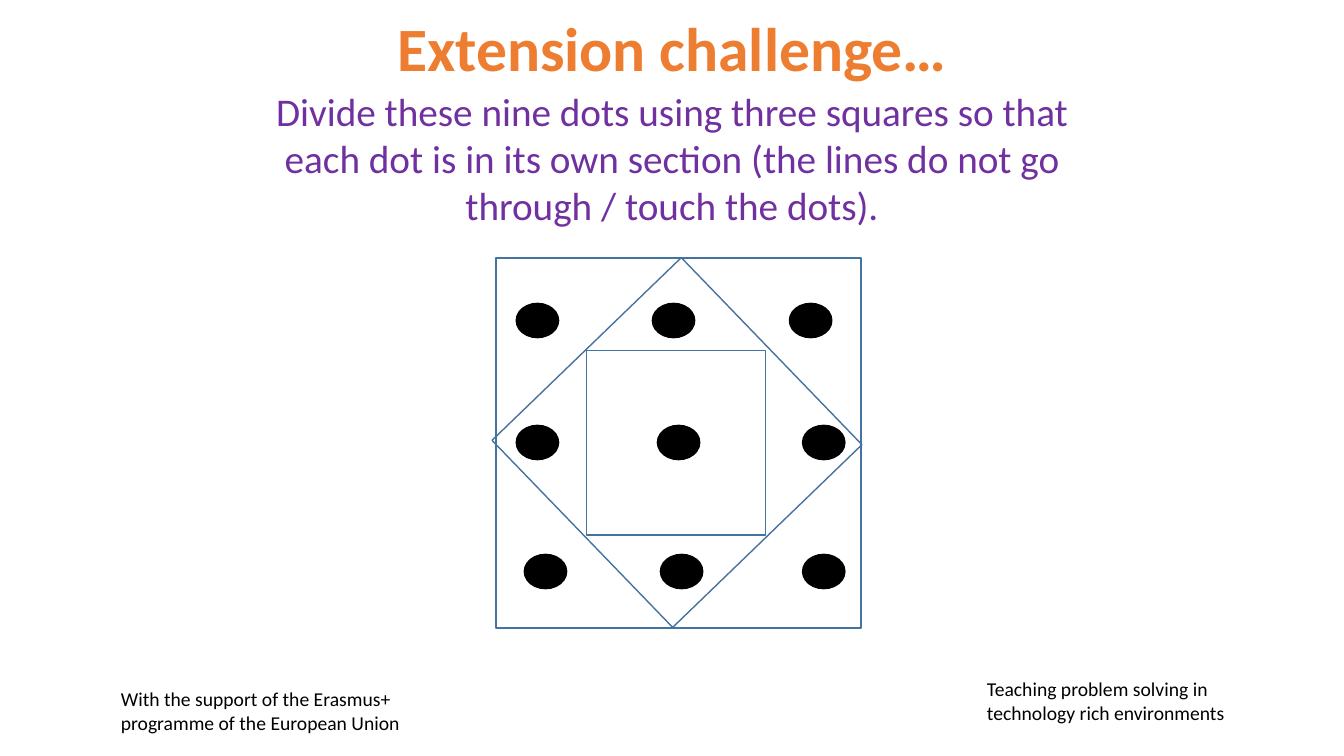
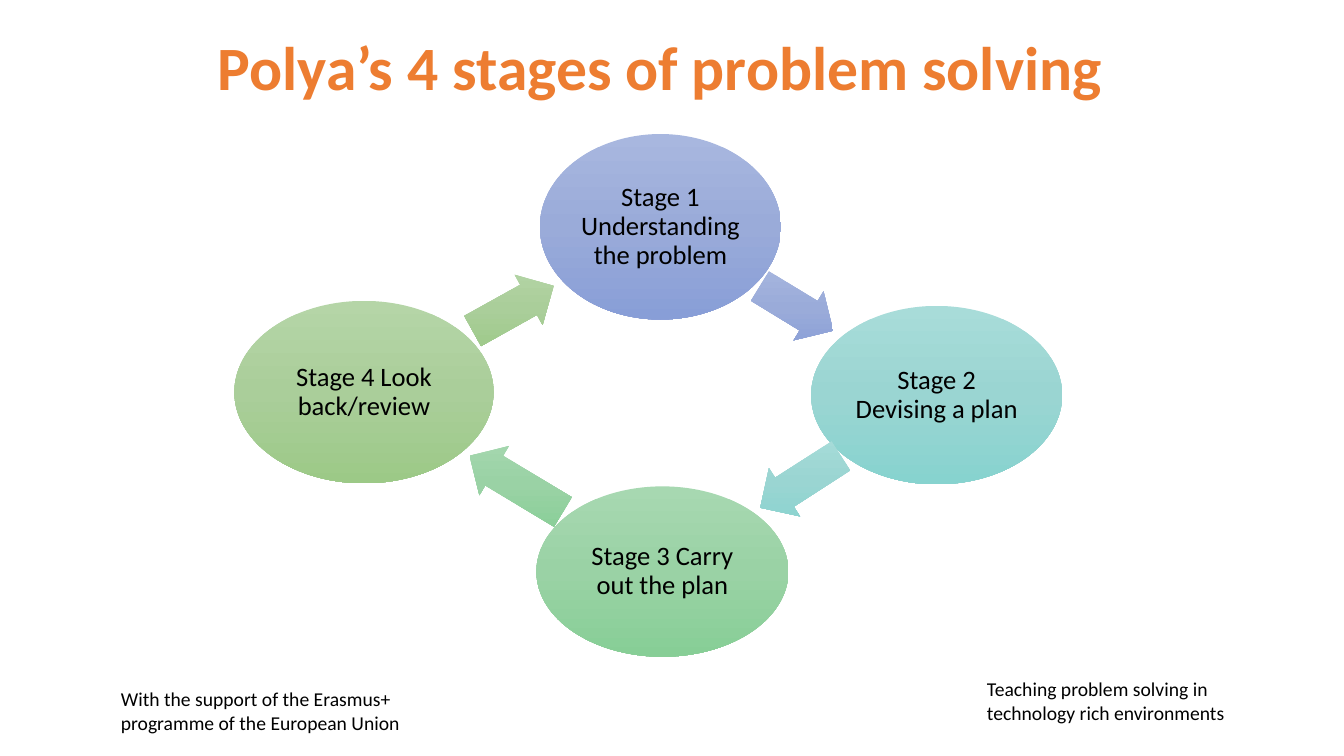
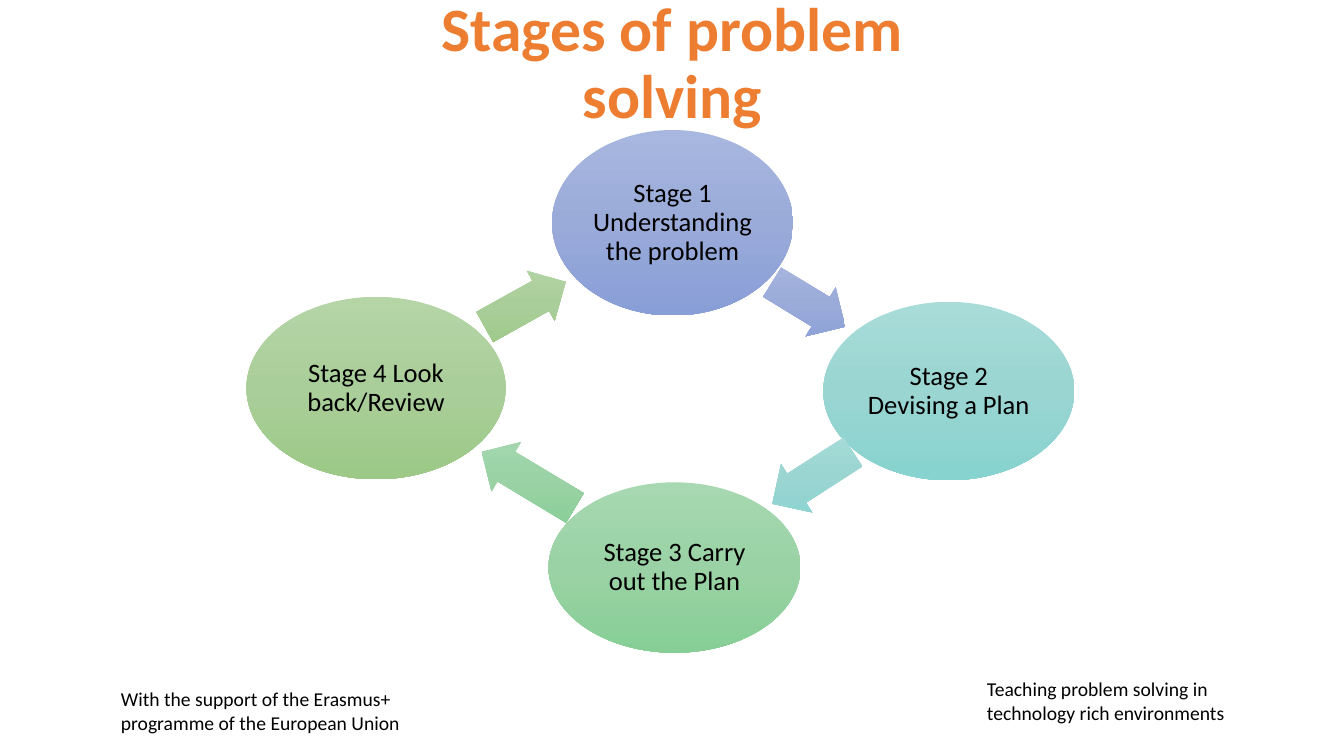
import math
from dataclasses import dataclass

from pptx import Presentation
from pptx import util as u
from pptx.dml.color import RGBColor
from pptx.enum import shapes, text
from pptx.oxml import parse_xml
from pptx.oxml.ns import nsdecls, qn


@dataclass(frozen=True)
class Theme:
    font: str = "Calibri"
    title: str = "ED7D31"
    body: str = "7030A0"
    ink: str = "000000"
    outline: str = "43739E"
    title_size: int = 44
    body_size: int = 28
    stage_size: int = 19
    footer_size: int = 14


THEME = Theme()
SLIDE_SIZE = (13.33, 7.5)

FOOTERS = [
    ("Teaching problem solving in technology rich environments", (9.69, 6.67, 2.58, 0.57)),
    ("With the support of the Erasmus+ programme of the European Union", (1.1, 6.77, 3.38, 0.58)),
]

CHALLENGE = {
    "title": ("Extension challenge…", (3.07, 0.09, 7.2, 0.85)),
    "body": ("Divide these nine dots using three squares so that each dot is in its own "
             "section (the lines do not go through / touch the dots).", (2.5, 0.82, 8.33, 1.51)),
    # row top: left edges of its dots
    "dots": {3.01: (5.12, 6.47, 7.83), 4.22: (5.12, 6.52, 7.96), 5.5: (5.2, 6.55, 7.96)},
    # box and rotation
    "squares": [((4.92, 2.56, 3.62, 3.67), 0),
                ((5.41, 3.1, 2.61, 2.58), 316),
                ((5.82, 3.48, 1.77, 1.83), 0)],
}
DOT_SIZE = (0.42, 0.34)

CYCLES = [
    {"title": ("Polya’s 4 stages of problem solving", (0.8, 0.2, 11.5, 1)),
     "centre": (6.55, 3.92),
     "stages": ["Stage 1 Understanding the problem", "Stage 2 Devising a plan",
                "Stage 3 Carry out the plan", "Stage 4 Look back/review"]},
    {"title": ("Stages of problem solving", (3.46, 0.01, 6.42, 1.27)),
     "centre": (6.67, 3.88),
     "stages": ["Stage 1 Understanding the problem", "Stage 2 Devising a Plan",
                "Stage 3 Carry out the Plan", "Stage 4 Look back/Review"]},
]

# Offsets are measured from the centre of the cycle.
STAGE_STYLES = [
    {"offset": (0, -1.67), "size": (2.39, 1.84), "arrow_offset": (1.35, -0.86),
     "arrow_length": 0.85, "gradient": ("A8B7DF", "9AABD9", "889ED7")},
    {"offset": (2.74, 0), "size": (2.49, 1.77), "arrow_offset": (1.39, 0.86),
     "arrow_length": 0.95, "gradient": ("A8DCD9", "9AD5D2", "87D3CF")},
    {"offset": (0.02, 1.75), "size": (2.5, 1.69), "arrow_offset": (-1.43, 0.88),
     "arrow_length": 1.08, "gradient": ("A7D8B1", "9AD2A5", "87CE96")},
    {"offset": (-2.94, -0.03), "size": (2.57, 1.81), "arrow_offset": (-1.46, -0.86),
     "arrow_length": 0.92, "gradient": ("B5D5A7", "AACE9A", "9CC987")},
]
ARROW_HEIGHT = 0.57
STAGE_INSET = 0.04


def inches(box):
    return [u.Inches(length) for length in box]


def centred_box(centre, offset, size):
    return [c + o - s / 2 for c, o, s in zip(centre, offset, size)] + list(size)


def write(shape, content, size, color, align=text.PP_ALIGN.LEFT,
          anchor=text.MSO_ANCHOR.TOP, spacing=1.0, bold=False):
    frame = shape.text_frame
    frame.word_wrap = True
    frame.vertical_anchor = anchor
    frame.text = content
    paragraph = frame.paragraphs[0]
    paragraph.alignment = align
    paragraph.line_spacing = spacing
    paragraph.font.name = THEME.font
    paragraph.font.size = u.Pt(size)
    paragraph.font.bold = bold
    paragraph.font.color.rgb = RGBColor.from_string(color)


def add_text(slide, content, box, size, color, **style):
    write(slide.shapes.add_textbox(*inches(box)), content, size, color, **style)


def add_shape(slide, kind, box, fill=None, line=None, rotation=0):
    shape = slide.shapes.add_shape(kind, *inches(box))
    shape.shadow.inherit = False
    shape.rotation = rotation
    if fill:
        shape.fill.solid()
        shape.fill.fore_color.rgb = RGBColor.from_string(fill)
    else:
        shape.fill.background()
    if line:
        shape.line.color.rgb = RGBColor.from_string(line)
        shape.line.width = u.Pt(1)
    else:
        shape.line.fill.background()
    return shape


def set_gradient(shape, colors):
    """Shade an unfilled shape from top to bottom, whatever its rotation."""
    stops = "".join(f'<a:gs pos="{i * 50000}"><a:srgbClr val="{color}"/></a:gs>'
                    for i, color in enumerate(colors))
    gradient = parse_xml(f'<a:gradFill {nsdecls("a")} rotWithShape="0"><a:gsLst>{stops}</a:gsLst>'
                         '<a:lin ang="5400000" scaled="0"/></a:gradFill>')
    properties = shape.element.spPr
    properties.replace(properties.find(qn("a:noFill")), gradient)


def add_slide(presentation, title):
    """Add a blank slide with the shared footers and title."""
    slide = presentation.slides.add_slide(presentation.slide_layouts[6])
    for content, box in FOOTERS:
        add_text(slide, content, box, THEME.footer_size, THEME.ink)
    add_text(slide, *title, THEME.title_size, THEME.title, align=text.PP_ALIGN.CENTER,
             anchor=text.MSO_ANCHOR.MIDDLE, spacing=0.9, bold=True)
    return slide


def add_challenge(presentation, challenge):
    slide = add_slide(presentation, challenge["title"])
    for top, lefts in challenge["dots"].items():
        for left in lefts:
            add_shape(slide, shapes.MSO_SHAPE.OVAL, (left, top, *DOT_SIZE), THEME.ink, THEME.ink)
    for box, rotation in challenge["squares"]:
        add_shape(slide, shapes.MSO_SHAPE.RECTANGLE, box, line=THEME.outline, rotation=rotation)
    add_text(slide, *challenge["body"], THEME.body_size, THEME.body, align=text.PP_ALIGN.CENTER)


def add_cycle(presentation, cycle):
    slide = add_slide(presentation, cycle["title"])
    following = STAGE_STYLES[1:] + STAGE_STYLES[:1]
    for label, style, target in zip(cycle["stages"], STAGE_STYLES, following):
        stage = add_shape(slide, shapes.MSO_SHAPE.OVAL,
                          centred_box(cycle["centre"], style["offset"], style["size"]))
        frame = stage.text_frame
        frame.margin_left = frame.margin_right = u.Inches(STAGE_INSET)
        frame.margin_top = frame.margin_bottom = u.Inches(STAGE_INSET)
        write(stage, label, THEME.stage_size, THEME.ink, align=text.PP_ALIGN.CENTER,
              anchor=text.MSO_ANCHOR.MIDDLE, spacing=0.9)

        across, down = (end - start for start, end in zip(style["offset"], target["offset"]))
        arrow = add_shape(slide, shapes.MSO_SHAPE.RIGHT_ARROW,
                          centred_box(cycle["centre"], style["arrow_offset"],
                                      (style["arrow_length"], ARROW_HEIGHT)),
                          rotation=math.degrees(math.atan2(down, across)) % 360)
        arrow.adjustments[0] = 0.6
        arrow.adjustments[1] = 0.5
        for shape in (stage, arrow):
            set_gradient(shape, style["gradient"])


def main():
    presentation = Presentation()
    presentation.slide_width, presentation.slide_height = inches(SLIDE_SIZE)
    add_challenge(presentation, CHALLENGE)
    for cycle in CYCLES:
        add_cycle(presentation, cycle)
    presentation.save("out.pptx")


if __name__ == "__main__":
    main()
